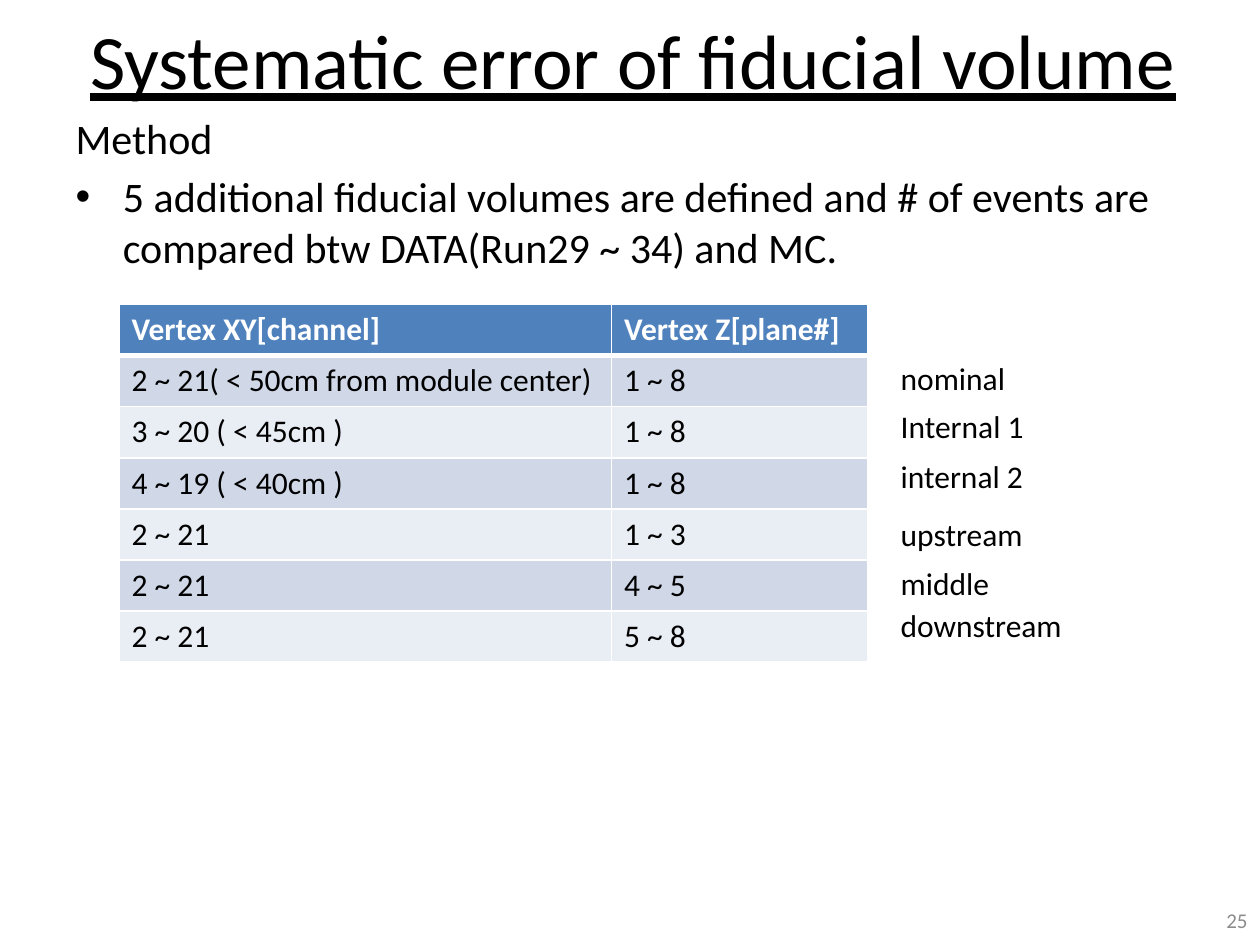
from dataclasses import dataclass

import pptx
import pptx.dml.color
import pptx.enum.text
import pptx.oxml
import pptx.oxml.ns
import pptx.util

Pt = pptx.util.Pt
ALIGN = pptx.enum.text.PP_ALIGN
ANCHOR = pptx.enum.text.MSO_ANCHOR

BLACK, WHITE, GREY = "000000", "FFFFFF", "8C8C8C"
HEADER_FILL = "4F81BD"
BAND_FILLS = ("D0D8E8", "E9EDF4")
ROW_HEIGHT = 28.8
COL_WIDTHS = (281.4, 146.3)


@dataclass
class Label:
    text: str
    top: float
    left: float = 507.6
    width: float = 135.4
    height: float = 29
    size: float = 18
    color: str = BLACK
    align: ALIGN = ALIGN.LEFT
    anchor: ANCHOR = ANCHOR.TOP


ROWS = [
    ("Vertex XY[channel]", "Vertex Z[plane#]"),
    ("2 ~ 21( < 50cm from module center)", "1 ~ 8"),
    ("3 ~ 20 ( < 45cm )", "1 ~ 8"),
    ("4 ~ 19 ( < 40cm )", "1 ~ 8"),
    ("2 ~ 21", "1 ~ 3"),
    ("2 ~ 21", "4 ~ 5"),
    ("2 ~ 21", "5 ~ 8"),
]
LABELS = [
    Label("nominal", 201.6, width=78.5),
    Label("Internal 1", 229),
    Label("internal 2", 257.8),
    Label("upstream", 290.9),
    Label("middle", 319),
    Label("downstream", 342.7),
    Label("25", 511.2, 658, 62, 28.8, 12, GREY, ALIGN.RIGHT, ANCHOR.MIDDLE),
]


def rgb(color: str) -> pptx.dml.color.RGBColor:
    return pptx.dml.color.RGBColor.from_string(color)


def write(p, text: str, size: float, color: str = BLACK, **formats) -> None:
    r = p.add_run()
    r.text = text
    r.font.color.rgb = rgb(color)
    for name, value in {"name": "Calibri", "size": Pt(size), **formats}.items():
        setattr(r.font, name, value)


def place(sp, left: float, top: float, width: float, height: float) -> None:
    box = {"left": left, "top": top, "width": width, "height": height}
    for name, value in box.items():
        setattr(sp, name, Pt(value))


def add_label(s, label: Label) -> None:
    sp = s.shapes.add_textbox(Pt(label.left), Pt(label.top), Pt(label.width), Pt(label.height))
    tf = sp.text_frame
    tf.word_wrap = True
    tf.vertical_anchor = label.anchor
    p = tf.paragraphs[0]
    p.alignment = label.align
    write(p, label.text, label.size, label.color)


def set_borders(cell, bottom: float, top: float) -> None:
    widths = {"lnL": 1, "lnR": 1, "lnT": top, "lnB": bottom}
    for i, (tag, width) in enumerate(widths.items()):
        line = pptx.oxml.parse_xml(
            f'<a:{tag} {pptx.oxml.ns.nsdecls("a")} w="{Pt(width)}"><a:solidFill>'
            f'<a:srgbClr val="{WHITE}"/></a:solidFill></a:{tag}>')
        cell._tc.get_or_add_tcPr().insert(i, line)


def add_vertex_table(s, left: float, top: float) -> None:
    table = s.shapes.add_table(len(ROWS), len(COL_WIDTHS), Pt(left), Pt(top),
                               Pt(sum(COL_WIDTHS)), Pt(ROW_HEIGHT * len(ROWS))).table
    for col, width in zip(table.columns, COL_WIDTHS):
        col.width = Pt(width)
    for i, texts in enumerate(ROWS):
        header = i == 0
        table.rows[i].height = Pt(ROW_HEIGHT)
        for j, text in enumerate(texts):
            cell = table.cell(i, j)
            cell.fill.solid()
            cell.fill.fore_color.rgb = rgb(HEADER_FILL if header else BAND_FILLS[(i - 1) % 2])
            set_borders(cell, bottom=3 if header else 1, top=3 if i == 1 else 1)
            write(cell.text_frame.paragraphs[0], text, 18,
                  WHITE if header else BLACK, bold=header)


def main() -> None:
    prs = pptx.Presentation()
    prs.slide_width, prs.slide_height = Pt(720), Pt(540)
    s = prs.slides.add_slide(prs.slide_layouts[1])

    # Title
    title = s.shapes.title
    place(title, -6.5, 0, 736.6, 67)
    write(title.text_frame.paragraphs[0], "Systematic error of fiducial volume", 44, underline=True)

    # Method text
    body = s.placeholders[1]
    place(body, 36, 60.5, 648, 133.2)
    tf = body.text_frame
    p = tf.paragraphs[0]
    p._p.get_or_add_pPr().append(
        pptx.oxml.parse_xml(f'<a:buNone {pptx.oxml.ns.nsdecls("a")}/>'))
    write(p, "Method", 24)
    write(tf.add_paragraph(), "5 additional fiducial volumes are defined and # of events are "
          "compared btw DATA(Run29 ~ 34) and MC.", 24)

    # Vertex ranges, row labels and page number
    add_vertex_table(s, 68, 174)
    for label in LABELS:
        add_label(s, label)

    prs.save("out.pptx")


if __name__ == "__main__":
    main()
